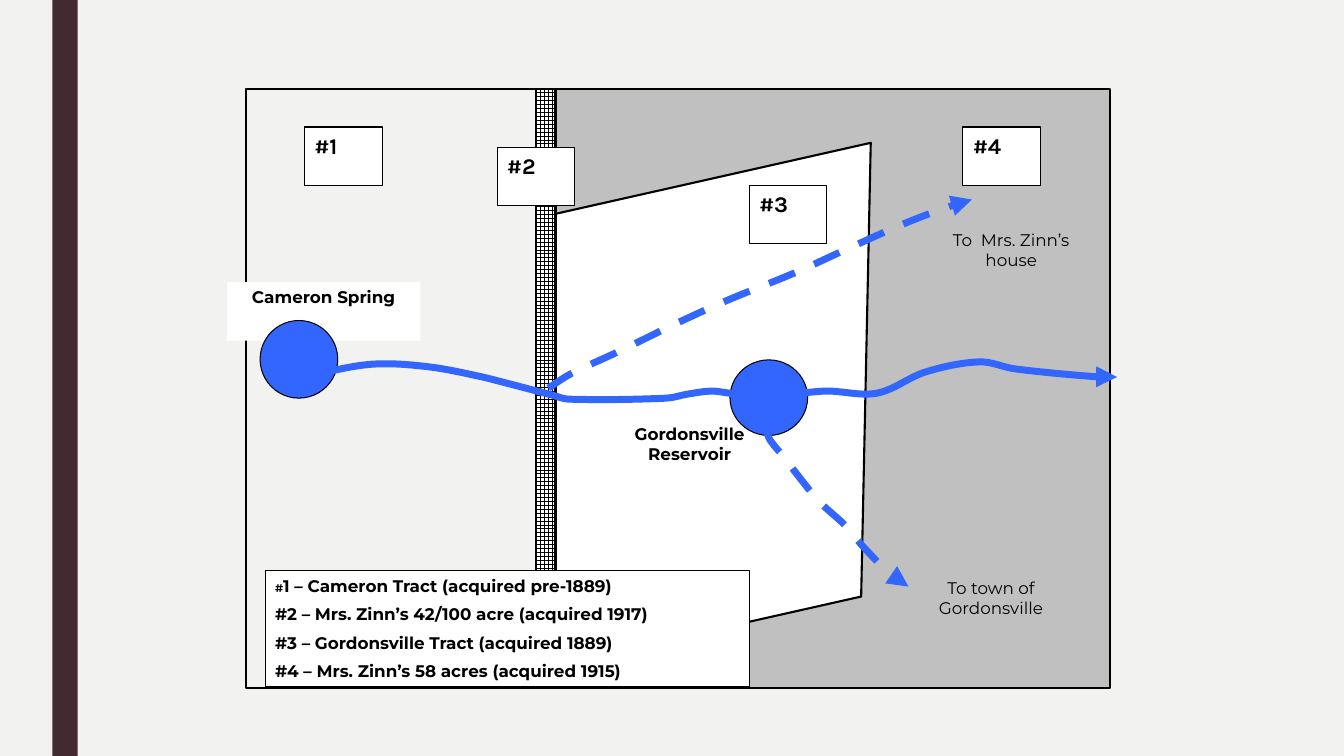
from math import dist

from lxml import etree
from pptx import Presentation
from pptx.dml.color import RGBColor
from pptx.enum.dml import MSO_LINE, MSO_PATTERN
from pptx.enum.shapes import MSO_SHAPE
from pptx.enum.text import MSO_ANCHOR, PP_ALIGN
from pptx.oxml.ns import qn
from pptx.util import Inches, Pt

RECTANGLE, OVAL = MSO_SHAPE.RECTANGLE, MSO_SHAPE.OVAL
PARALLELOGRAM = MSO_SHAPE.PARALLELOGRAM
LEFT, CENTER = PP_ALIGN.LEFT, PP_ALIGN.CENTER
TOP = MSO_ANCHOR.TOP
DASH = MSO_LINE.DASH
LARGE_GRID = MSO_PATTERN.LARGE_GRID

PAPER = RGBColor(0xF2, 0xF2, 0xF0)
MAROON = RGBColor(0x43, 0x2A, 0x30)
BLACK = RGBColor(0, 0, 0)
WHITE = RGBColor(0xFF, 0xFF, 0xFF)
GRAY = RGBColor(0xC0, 0xC0, 0xC0)
WATER = RGBColor(0x33, 0x66, 0xFF)

# Waypoints in inches from the top left corner of the map.
RIVER = [(0.41, 2.94), (0.69, 2.86), (0.89, 2.79), (1.31, 2.73), (1.82, 2.76),
         (2.3, 2.85), (2.62, 2.93), (3.04, 3.04), (3.2, 3.08), (4.17, 3.07),
         (4.38, 3.03), (4.61, 3.0), (4.79, 3.02), (5.02, 3.06),
         (5.21, 3.13), (5.38, 3.05), (5.74, 3.0), (6.26, 3.02), (6.74, 2.81),
         (7.28, 2.71), (7.63, 2.78), (8.46, 2.86), (8.64, 2.86)]
HOUSE_PIPE = [(3.0, 2.97), (3.22, 2.83), (3.67, 2.62), (4.04, 2.44),
              (4.18, 2.37), (4.75, 2.11), (5.46, 1.82), (5.92, 1.61),
              (6.55, 1.33), (7.06, 1.14), (7.2, 1.1)]
TOWN_PIPE = [(5.15, 3.37), (5.2, 3.49), (5.34, 3.66), (5.46, 3.82),
             (5.69, 4.1), (5.95, 4.34), (6.1, 4.52), (6.32, 4.75),
             (6.47, 4.88), (6.57, 4.94)]
TRACT_TAGS = [("#1", 0.58, 0.38), ("#4", 7.11, 0.38),
              ("#2", 2.49, 0.58), ("#3", 4.99, 0.96)]
LEGEND = ["#1 – Cameron Tract (acquired pre-1889)",
          "#2 – Mrs. Zinn’s 42/100 acre (acquired 1917)",
          "#3 – Gordonsville Tract (acquired 1889)",
          "#4 – Mrs. Zinn’s 58 acres (acquired 1915)"]


def add_area(slide, kind, left, top, width, height, fill=None, line_width=None):
    shape = slide.shapes.add_shape(
        kind, Inches(left), Inches(top), Inches(width), Inches(height))
    shape.shadow.inherit = False
    if fill is None:
        shape.fill.background()
    else:
        shape.fill.solid()
        shape.fill.fore_color.rgb = fill
    if line_width is None:
        shape.line.fill.background()
    else:
        shape.line.color.rgb = BLACK
        shape.line.width = Pt(line_width)
    return shape


def write(shape, lines, font_name="Montserrat", size=12, bold=True,
          alignment=CENTER, gap=0):
    frame = shape.text_frame
    frame.word_wrap = True
    frame.vertical_anchor = TOP
    frame.text = "\n".join(lines)
    for paragraph in frame.paragraphs:
        paragraph.alignment = alignment
        paragraph.space_after = Pt(gap)
        font = paragraph.font
        font.name, font.size, font.bold = font_name, Pt(size), bold
        font.color.rgb = BLACK


def handle(point, before, after, reach):
    """Return the control point that lies reach away along the tangent."""
    span = dist(before, after)
    return tuple(p + reach * (b - a) / span
                 for p, a, b in zip(point, before, after))


def bend(flow):
    """Turn the straight segments of a freeform into smooth curves."""
    points = [(int(point.get("x")), int(point.get("y")))
              for point in flow._element.iter(qn("a:pt"))]
    padded = [points[0], *points, points[-1]]
    segments = list(flow._element.iter(qn("a:lnTo")))
    for segment, a, b, c, d in zip(segments, padded, padded[1:],
                                   padded[2:], padded[3:]):
        reach = dist(b, c) / 3
        curve = etree.Element(qn("a:cubicBezTo"))
        for x, y in (handle(b, a, c, reach), handle(c, b, d, -reach), c):
            etree.SubElement(curve, qn("a:pt"), x=str(round(x)), y=str(round(y)))
        segment.getparent().replace(segment, curve)


def add_flow(slide, left, top, points, dash=None):
    start, *others = [(Inches(left + x), Inches(top + y)) for x, y in points]
    builder = slide.shapes.build_freeform(*start)
    builder.add_line_segments(others, close=False)
    flow = builder.convert_to_shape()
    bend(flow)
    flow.shadow.inherit = False
    flow.fill.background()
    flow.line.color.rgb = WATER
    flow.line.width = Pt(5)
    if dash is not None:
        flow.line.dash_style = dash
    line = flow.line._get_or_add_ln()
    etree.SubElement(line, qn("a:round"))
    etree.SubElement(line, qn("a:tailEnd"), type="triangle")


def add_tracts(slide, left, top):
    height = 5.95
    add_area(slide, RECTANGLE, left, top, 4.61, height, line_width=1.5)
    add_area(slide, RECTANGLE, left + 3, top, 5.57, height, GRAY, 1.5)
    town_tract = add_area(slide, PARALLELOGRAM, left + 2.4, top + 0.96,
                          4.33, 4.37, WHITE, 1.5)
    town_tract.rotation = 347.3
    strip = add_area(slide, RECTANGLE, left + 2.88, top, 0.19, height,
                     line_width=1.5)
    strip.fill.patterned()
    strip.fill.pattern = LARGE_GRID
    strip.fill.fore_color.rgb = BLACK
    strip.fill.back_color.rgb = WHITE


def add_waterworks(slide, left, top):
    for name, x, y, width in [("Cameron Spring", -0.19, 1.92, 1.92),
                              ("Gordonsville Reservoir", 3.6, 3.27, 1.6)]:
        label = add_area(slide, RECTANGLE, left + x, top + y, width, 0.58, WHITE)
        write(label, [name])
    add_flow(slide, left, top, HOUSE_PIPE, DASH)
    for x, y, height in [(0.14, 2.3, 0.77), (4.8, 2.69, 0.75)]:
        add_area(slide, OVAL, left + x, top + y, 0.77, height, WATER, 0.75)


def add_tags_and_legend(slide, left, top):
    for tag, x, y in TRACT_TAGS:
        box = add_area(slide, RECTANGLE, left + x, top + y, 0.77, 0.58,
                       WHITE, 0.75)
        write(box, [tag], "Karla", 16, alignment=LEFT)
    legend = add_area(slide, RECTANGLE, left + 0.19, top + 4.78, 4.8, 1.15,
                      WHITE, 0.75)
    write(legend, LEGEND, alignment=LEFT, gap=6)
    first = legend.text_frame.paragraphs[0]
    first.runs[0].text = LEGEND[0][0]
    first.runs[0].font.size = Pt(8)
    first.add_run().text = LEGEND[0][1:]


def add_destinations(slide, left, top):
    for text, x, y in [("To town of Gordonsville", 6.59, 4.8),
                       ("To  Mrs. Zinn’s house", 6.79, 1.35)]:
        box = slide.shapes.add_textbox(
            Inches(left + x), Inches(top + y), Inches(1.6), Inches(0.96))
        write(box, [text], bold=False)


def add_map(slide, left, top):
    add_tracts(slide, left, top)
    add_waterworks(slide, left, top)
    add_tags_and_legend(slide, left, top)
    add_flow(slide, left, top, RIVER)
    add_flow(slide, left, top, TOWN_PIPE, DASH)
    add_destinations(slide, left, top)


def main():
    presentation = Presentation()
    presentation.slide_width = Inches(13.33)
    presentation.slide_height = Inches(7.5)
    slide = presentation.slides.add_slide(presentation.slide_layouts[6])
    slide.background.fill.solid()
    slide.background.fill.fore_color.rgb = PAPER
    add_area(slide, RECTANGLE, 0.52, 0, 0.25, 7.5, MAROON)
    add_map(slide, 2.44, 0.88)
    presentation.save("out.pptx")


if __name__ == "__main__":
    main()
